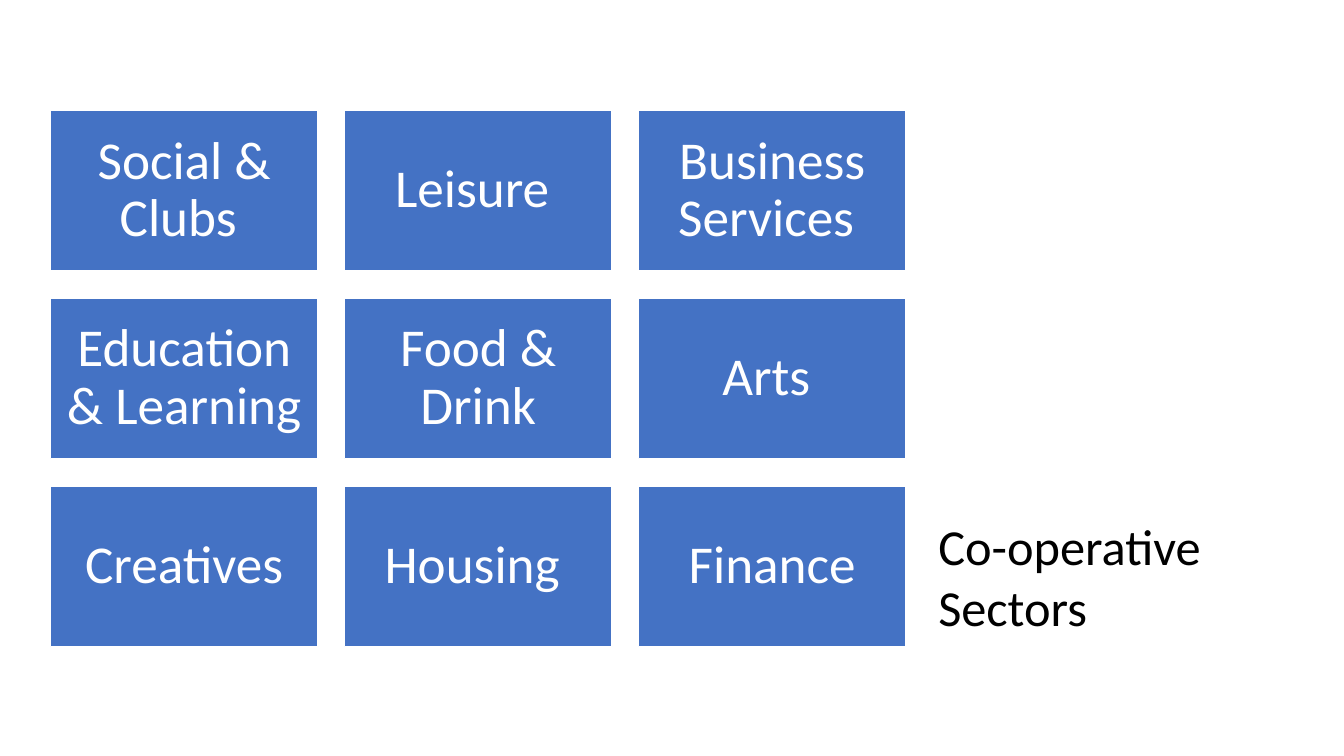
from pptx import Presentation
from pptx.dml.color import RGBColor
from pptx.enum.shapes import MSO_SHAPE
from pptx.enum.text import MSO_ANCHOR, MSO_AUTO_SIZE, PP_ALIGN
from pptx.util import Emu, Pt

RECTANGLE = MSO_SHAPE.RECTANGLE
MIDDLE, TOP = MSO_ANCHOR.MIDDLE, MSO_ANCHOR.TOP
CENTER, LEFT = PP_ALIGN.CENTER, PP_ALIGN.LEFT
GROW = MSO_AUTO_SIZE.SHAPE_TO_FIT_TEXT
NO_FIT = MSO_AUTO_SIZE.NONE

WHITE = RGBColor(0xFF, 0xFF, 0xFF)
BLACK = RGBColor(0x00, 0x00, 0x00)
BLUE = RGBColor(0x44, 0x72, 0xC4)

EMU_PER_PX = 9525
TITLE_ONLY = 5
COLUMNS = 3
GRID_LEFT, GRID_TOP = 48, 105
TILE_WIDTH, TILE_HEIGHT = 255, 153
COLUMN_PITCH, ROW_PITCH = 280, 179

SECTORS = [
    "Social & Clubs ", "Leisure ", "Business Services ",
    "Education & Learning ", "Food & Drink", "Arts ",
    "Creatives", "Housing ", "Finance",
]


def px(length):
    return Emu(length * EMU_PER_PX)


def set_all(target, values):
    for name, value in values.items():
        setattr(target, name, value)


def write(shape, words, size, color, frame_format, paragraph_format):
    frame = shape.text_frame
    frame.text = words
    set_all(frame, {"word_wrap": True, **frame_format})
    paragraph = frame.paragraphs[0]
    set_all(paragraph, paragraph_format)
    font = paragraph.runs[0].font
    set_all(font, {"name": "Calibri", "size": Pt(size)})
    font.color.rgb = color


def add_sector(slide, words, row, column):
    tile = slide.shapes.add_shape(
        RECTANGLE,
        px(GRID_LEFT + column * COLUMN_PITCH),
        px(GRID_TOP + row * ROW_PITCH),
        px(TILE_WIDTH),
        px(TILE_HEIGHT),
    )
    tile.shadow.inherit = False
    tile.fill.solid()
    tile.fill.fore_color.rgb = BLUE
    tile.line.color.rgb = WHITE
    tile.line.width = Pt(1)
    sides = ("left", "top", "right", "bottom")
    margins = {f"margin_{side}": px(15) for side in sides}
    write(tile, words, 38, WHITE,
          {"vertical_anchor": MIDDLE, "auto_size": NO_FIT, **margins},
          {"alignment": CENTER, "line_spacing": 0.9})


def place_title(slide, words):
    title = slide.shapes.title
    set_all(title, {"left": px(884), "top": px(486),
                    "width": px(369), "height": px(130)})
    write(title, words, 36, BLACK,
          {"vertical_anchor": TOP, "auto_size": GROW},
          {"alignment": LEFT, "line_spacing": 1.0})


def main():
    deck = Presentation()
    set_all(deck, {"slide_width": px(1280), "slide_height": px(720)})
    slide = deck.slides.add_slide(deck.slide_layouts[TITLE_ONLY])
    for index, sector in enumerate(SECTORS):
        add_sector(slide, sector, *divmod(index, COLUMNS))
    place_title(slide, "Co-operative Sectors")
    deck.save("out.pptx")


if __name__ == "__main__":
    main()
